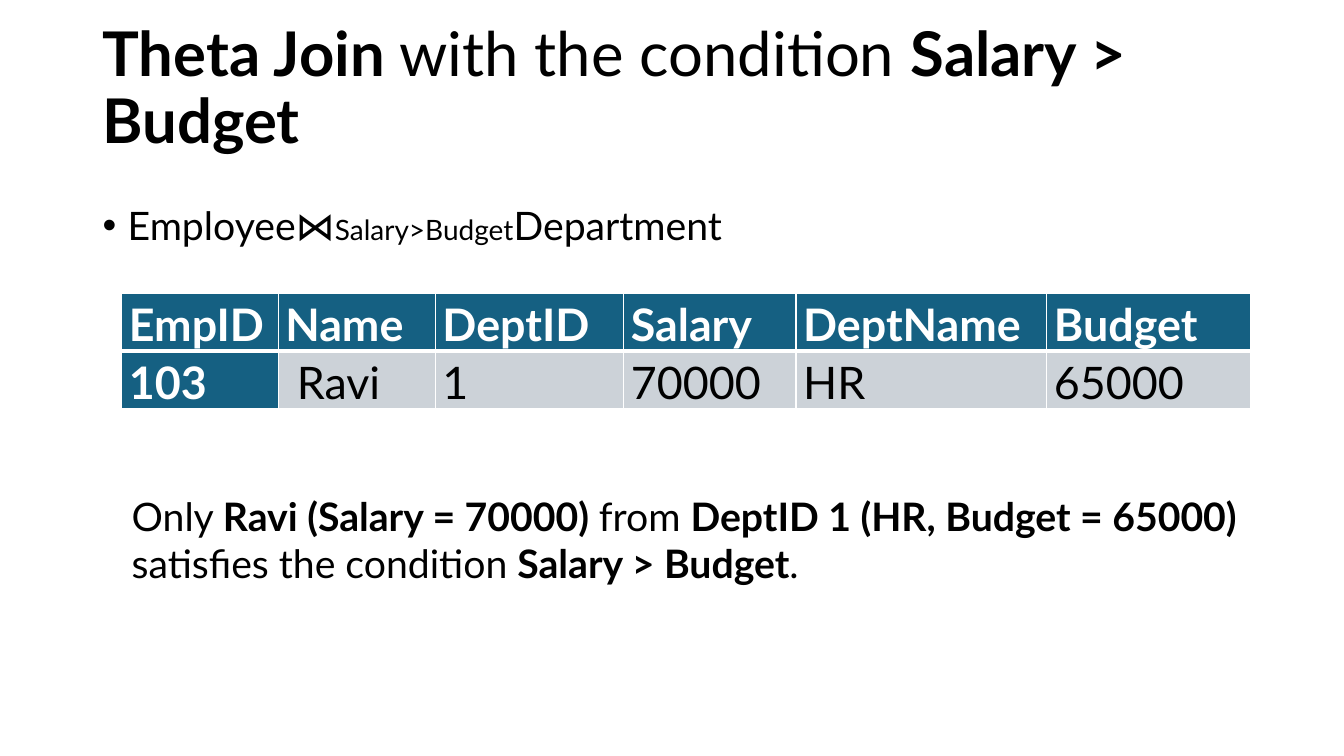
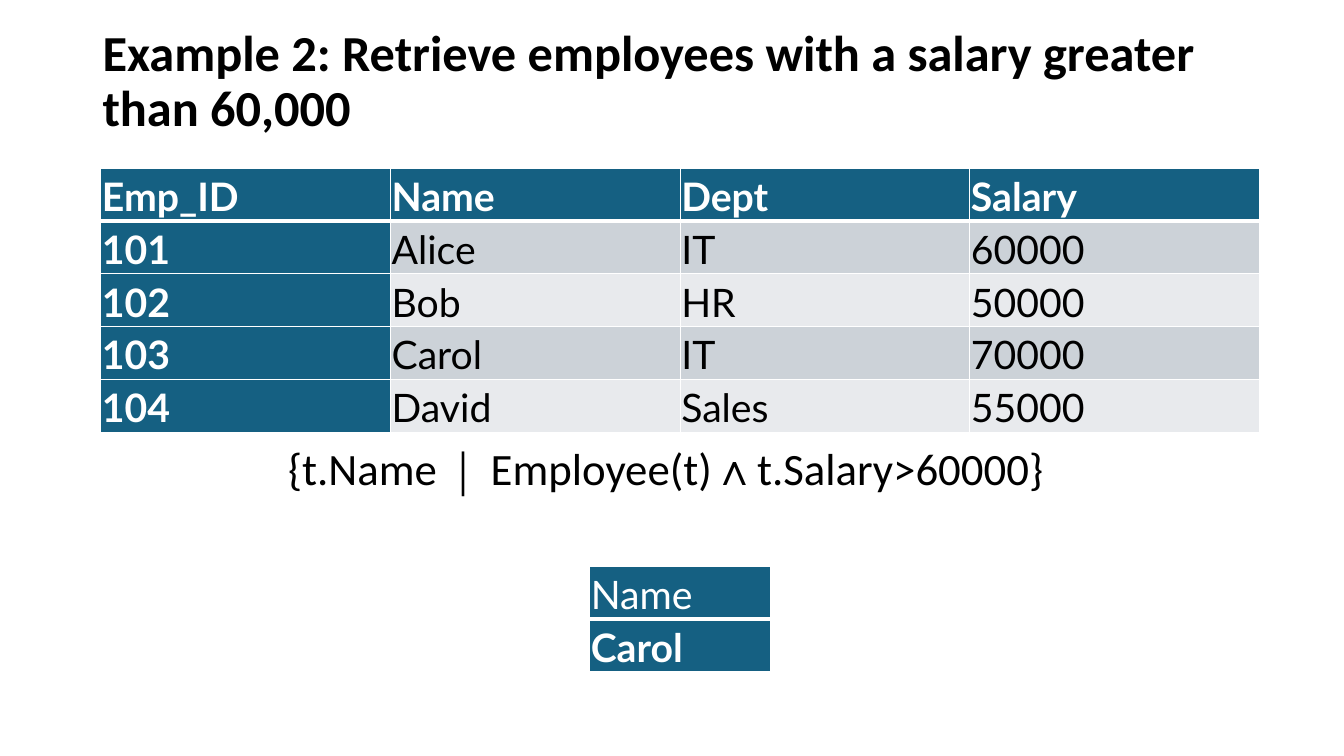
from dataclasses import dataclass

import lxml.etree
import pptx
import pptx.dml.color
import pptx.enum.text
import pptx.oxml.ns
import pptx.util

Cm = pptx.util.Cm
Pt = pptx.util.Pt
qn = pptx.oxml.ns.qn

COLORS = {
    "text": "000000",
    "white": "FFFFFF",
    "header": "156082",
    "band_dark": "CCD2D8",
    "band_light": "E8EAED",
}
MAIN, ALT, SYMBOL = "Lato", "Calibri", "Times New Roman"
TITLE_LEFT, TITLE_TOP, TITLE_WIDTH = 2.33, 1.02, 29.21


@dataclass(frozen=True)
class Span:
    """A stretch of text with one format."""
    text: str
    size: float = 28
    bold: bool = False
    font: str = MAIN
    color: str = "text"


@dataclass(frozen=True)
class TableSpec:
    """A table with a header row and a header column; lengths in cm."""
    left: float
    top: float
    widths: tuple[float, ...]
    row_height: float
    size: float
    margins: tuple[float, float]
    rows: tuple[tuple[str, ...], ...]
    bold_header: bool = True


def rgb(name: str) -> pptx.dml.color.RGBColor:
    return pptx.dml.color.RGBColor.from_string(COLORS[name])


def format_run(r, span: Span) -> None:
    r.font.name = span.font
    r.font.size = Pt(span.size)
    r.font.bold = span.bold
    r.font.color.rgb = rgb(span.color)


def add_spans(p, spans: tuple[Span, ...]) -> None:
    for span in spans:
        r = p.add_run()
        r.text = span.text
        format_run(r, span)


def place(sp, left: float, top: float, width: float, height: float) -> None:
    sp.left, sp.top, sp.width, sp.height = map(Cm, (left, top, width, height))


def set_title(slide, spans: tuple[Span, ...], height: float):
    """Fill the title placeholder in the shared title style."""
    sp = slide.shapes.title
    place(sp, TITLE_LEFT, TITLE_TOP, TITLE_WIDTH, height)
    tf = sp.text_frame
    tf.auto_size = pptx.enum.text.MSO_AUTO_SIZE.NONE
    tf.vertical_anchor = pptx.enum.text.MSO_ANCHOR.MIDDLE
    p = tf.paragraphs[0]
    p.alignment = pptx.enum.text.PP_ALIGN.LEFT
    p.line_spacing = 0.9
    add_spans(p, spans)
    return tf


def set_bullet(slide, spans: tuple[Span, ...]) -> None:
    """Fill the body placeholder with one bulleted line."""
    sp = slide.placeholders[1]
    place(sp, TITLE_LEFT, 5.08, TITLE_WIDTH, 12.09)
    tf = sp.text_frame
    tf.auto_size = pptx.enum.text.MSO_AUTO_SIZE.NONE
    p = tf.paragraphs[0]
    p.line_spacing = 0.9
    p.space_before = Pt(10)
    indent = Pt(18)
    pPr = p._p.get_or_add_pPr()
    pPr.set("marL", str(indent))
    pPr.set("indent", str(-indent))
    add_spans(p, spans)


def add_text(slide, left: float, top: float, width: float, height: float,
             spans: tuple[Span, ...]) -> None:
    box = slide.shapes.add_textbox(*map(Cm, (left, top, width, height)))
    tf = box.text_frame
    tf.word_wrap = True
    tf.auto_size = pptx.enum.text.MSO_AUTO_SIZE.SHAPE_TO_FIT_TEXT
    add_spans(tf.paragraphs[0], spans)


def set_borders(cell, top: float, bottom: float) -> None:
    """White lines round a cell; side lines are 1 pt."""
    tcPr = cell._tc.get_or_add_tcPr()
    for side, width in (("L", 1), ("R", 1), ("T", top), ("B", bottom)):
        ln = lxml.etree.SubElement(tcPr, qn(f"a:ln{side}"), w=str(Pt(width)))
        fill = lxml.etree.SubElement(ln, qn("a:solidFill"))
        lxml.etree.SubElement(fill, qn("a:srgbClr"), val=COLORS["white"])


def fill_cell(cell, text: str, row: int, col: int, table: TableSpec) -> None:
    set_borders(cell, top=3 if row == 1 else 1, bottom=3 if row == 0 else 1)
    is_header = row == 0 or col == 0
    band = "band_dark" if row % 2 else "band_light"
    cell.fill.solid()
    cell.fill.fore_color.rgb = rgb("header" if is_header else band)

    side, end = map(Cm, table.margins)
    cell.margin_left = cell.margin_right = side
    cell.margin_top = cell.margin_bottom = end
    cell.vertical_anchor = pptx.enum.text.MSO_ANCHOR.MIDDLE

    bold = table.bold_header if row == 0 else col == 0
    p = cell.text_frame.paragraphs[0]
    p.text = text
    p.line_spacing = 1.07
    p.space_after = Pt(8)
    format_run(p.runs[0], Span(text, table.size, bold,
                               color="white" if is_header else "text"))


def add_table(slide, table: TableSpec) -> None:
    n_rows = len(table.rows)
    frame = slide.shapes.add_table(
        n_rows, len(table.widths), Cm(table.left), Cm(table.top),
        Cm(sum(table.widths)), Cm(table.row_height * n_rows))
    grid = frame.table
    grid.first_col = True
    for column, width in zip(grid.columns, table.widths):
        column.width = Cm(width)
    for i, texts in enumerate(table.rows):
        grid.rows[i].height = Cm(table.row_height)
        for j, text in enumerate(texts):
            fill_cell(grid.cell(i, j), text, i, j, table)


JOIN_RESULT = TableSpec(
    left=3.07, top=7.39, widths=(3.94, 3.96, 4.75, 4.34, 6.32, 5.13),
    row_height=1.07, size=32, margins=(0.18, 0),
    rows=(
        ("EmpID", "Name", "DeptID", "Salary", "DeptName", "Budget"),
        ("103", " Ravi", "1", "70000", "HR", "65000"),
    ))

EMPLOYEES = TableSpec(
    left=2.54, top=4.24, widths=(7.3,) * 4,
    row_height=0.86, size=28, margins=(0.03, 0.03),
    rows=(
        ("Emp_ID", "Name", "Dept", "Salary"),
        ("101", "Alice", "IT", "60000"),
        ("102", "Bob", "HR", "50000"),
        ("103", "Carol", "IT", "70000"),
        ("104", "David", "Sales", "55000"),
    ))

QUERY_RESULT = TableSpec(
    left=14.86, top=14.27, widths=(4.57,),
    row_height=1.14, size=28, margins=(0.03, 0.03),
    rows=(("Name",), ("Carol",)), bold_header=False)


def build_theta_join(prs) -> None:
    slide = prs.slides.add_slide(prs.slide_layouts[1])
    set_title(slide, (
        Span("Theta Join", 44, True),
        Span(" with the condition ", 44),
        Span("Salary > Budget", 44, True),
    ), height=2.49)
    set_bullet(slide, (
        Span("Employee⋈"),
        Span("Salary>Budget", 20),
        Span("Department"),
    ))
    add_table(slide, JOIN_RESULT)
    add_text(slide, 3.07, 12.27, 28.45, 2.64, (
        Span("Only "),
        Span("Ravi (Salary = 70000)", bold=True),
        Span(" from "),
        Span("DeptID 1 (HR, Budget = 65000)", bold=True),
        Span(" satisfies the condition "),
        Span("Salary > Budget", bold=True),
        Span("."),
    ))


def build_salary_query(prs) -> None:
    slide = prs.slides.add_slide(prs.slide_layouts[5])
    tf = set_title(slide, (
        Span("Example 2: Retrieve employees with a salary greater than 60,000",
             36, True, ALT),
    ), height=3.68)
    tf.margin_bottom = Cm(1.68)  # keeps the title clear of the table
    add_table(slide, EMPLOYEES)
    add_text(slide, 7.01, 10.97, 19.84, 1.63, (
        Span("{t.Name ", 32, font=ALT),
        Span("∣ ", 32, font=SYMBOL),
        Span("Employee(t)", 32, font=ALT),
        Span("∧", 32, font=SYMBOL),
        Span("t.Salary>60000}", 32, font=ALT),
    ))
    add_table(slide, QUERY_RESULT)


def main() -> None:
    prs = pptx.Presentation()
    prs.slide_width, prs.slide_height = Cm(33.87), Cm(19.05)
    build_theta_join(prs)
    build_salary_query(prs)
    prs.save("out.pptx")


if __name__ == "__main__":
    main()
